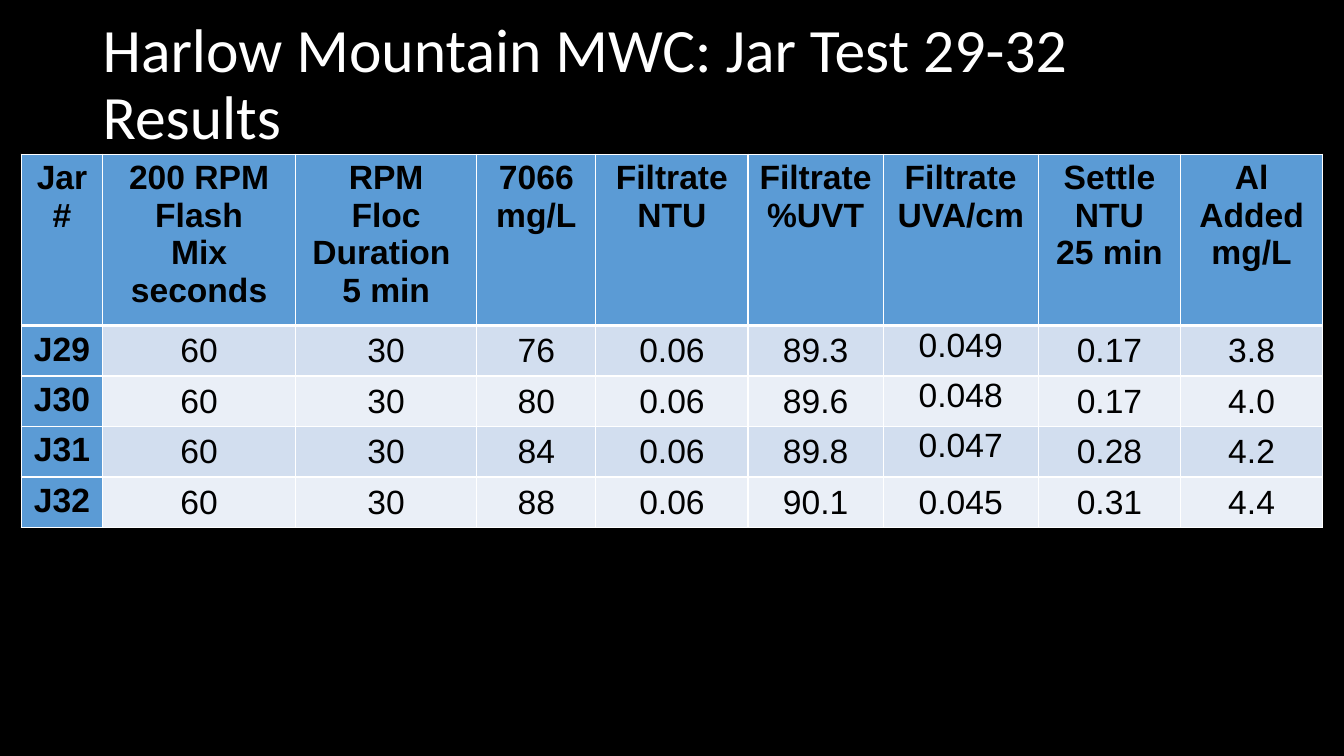
import dataclasses

import lxml.etree
import pptx
import pptx.dml.color
import pptx.enum.text
import pptx.oxml.ns
import pptx.table
import pptx.util

Inches = pptx.util.Inches
Pt = pptx.util.Pt
MIDDLE = pptx.enum.text.MSO_ANCHOR.MIDDLE
TOP = pptx.enum.text.MSO_ANCHOR.TOP

COLORS = {
    "background": "000000",
    "title": "FFFFFF",
    "text": "000000",
    "border": "FFFFFF",
    "heading": "5B9BD5",
    "odd_row": "D2DEEF",
    "even_row": "EAEFF7",
}


@dataclasses.dataclass(frozen=True)
class Measure:
    heading: str
    width: float
    values: tuple[str, ...]


MEASURES = (
    Measure("Jar\n#", 0.81, ("J29", "J30", "J31", "J32")),
    Measure("200 RPM\nFlash\nMix\nseconds", 1.91, ("60",) * 4),
    Measure("RPM\nFloc\nDuration \n5 min", 1.8, ("30",) * 4),
    Measure("7066\nmg/L", 1.18, ("76", "80", "84", "88")),
    Measure("Filtrate\nNTU", 1.51, ("0.06",) * 4),
    Measure("Filtrate\n%UVT", 1.34, ("89.3", "89.6", "89.8", "90.1")),
    Measure("Filtrate\nUVA/cm", 1.54, ("0.049", "0.048", "0.047", "0.045")),
    Measure("Settle\nNTU\n25 min", 1.41, ("0.17", "0.17", "0.28", "0.31")),
    Measure("Al\nAdded\nmg/L", 1.41, ("3.8", "4.0", "4.2", "4.4")),
)
JAR_COLUMN = 0
UVA_COLUMN = 6
HEADING_HEIGHT = 1.59
JAR_HEIGHT = 0.47


def rgb(name: str) -> pptx.dml.color.RGBColor:
    return pptx.dml.color.RGBColor.from_string(COLORS[name])


def set_borders(cell: pptx.table._Cell, row: int) -> None:
    properties = cell._tc.get_or_add_tcPr()
    widths = {
        "lnL": 1,
        "lnR": 1,
        "lnT": 3 if row == 1 else 1,
        "lnB": 3 if row == 0 else 1,
    }
    for position, (side, width) in enumerate(widths.items()):
        line = lxml.etree.Element(pptx.oxml.ns.qn(f"a:{side}"), w=str(Pt(width)))
        fill = lxml.etree.SubElement(line, pptx.oxml.ns.qn("a:solidFill"))
        lxml.etree.SubElement(
            fill, pptx.oxml.ns.qn("a:srgbClr"), val=COLORS["border"]
        )
        properties.insert(position, line)


def fill_cell(cell: pptx.table._Cell, text: str, row: int, column: int) -> None:
    is_heading = row == 0 or column == JAR_COLUMN
    cell.text = text
    cell.fill.solid()
    if is_heading:
        cell.fill.fore_color.rgb = rgb("heading")
    else:
        cell.fill.fore_color.rgb = rgb("odd_row" if row % 2 else "even_row")
        cell.margin_left = cell.margin_right = cell.margin_top = Inches(0.01)
        cell.margin_bottom = 0
        raised = column == UVA_COLUMN and row < len(MEASURES[column].values)
        cell.vertical_anchor = TOP if raised else MIDDLE
    for paragraph in cell.text_frame.paragraphs:
        paragraph.alignment = pptx.enum.text.PP_ALIGN.CENTER
        paragraph.font.name = "Arial"
        paragraph.font.size = Pt(24)
        paragraph.font.bold = is_heading
        paragraph.font.color.rgb = rgb("text")
    set_borders(cell, row)


def add_title(slide: pptx.slide.Slide, text: str) -> None:
    title = slide.shapes.add_textbox(
        Inches(0.92), Inches(0.13), Inches(11.5), Inches(1.45)
    ).text_frame
    title.word_wrap = True
    title.vertical_anchor = MIDDLE
    heading = title.paragraphs[0]
    heading.text = text
    heading.line_spacing = 0.9
    heading.font.name = "Calibri"
    heading.font.size = Pt(44)
    heading.font.color.rgb = rgb("title")


def add_results(slide: pptx.slide.Slide) -> None:
    heights = [HEADING_HEIGHT] + [JAR_HEIGHT] * len(MEASURES[JAR_COLUMN].values)
    results = slide.shapes.add_table(
        len(heights),
        len(MEASURES),
        Inches(0.21),
        Inches(1.53),
        Inches(sum(measure.width for measure in MEASURES)),
        Inches(sum(heights)),
    ).table
    results.first_col = True
    for row, height in enumerate(heights):
        results.rows[row].height = Inches(height)
    for column, measure in enumerate(MEASURES):
        results.columns[column].width = Inches(measure.width)
        for row, text in enumerate((measure.heading, *measure.values)):
            fill_cell(results.cell(row, column), text, row, column)


def main() -> None:
    presentation = pptx.Presentation()
    presentation.slide_width = Inches(13.33)
    presentation.slide_height = Inches(7.5)
    slide = presentation.slides.add_slide(presentation.slide_layouts[6])
    slide.background.fill.solid()
    slide.background.fill.fore_color.rgb = rgb("background")
    add_title(slide, "Harlow Mountain MWC: Jar Test 29-32 Results")
    add_results(slide)
    presentation.save("out.pptx")


if __name__ == "__main__":
    main()
